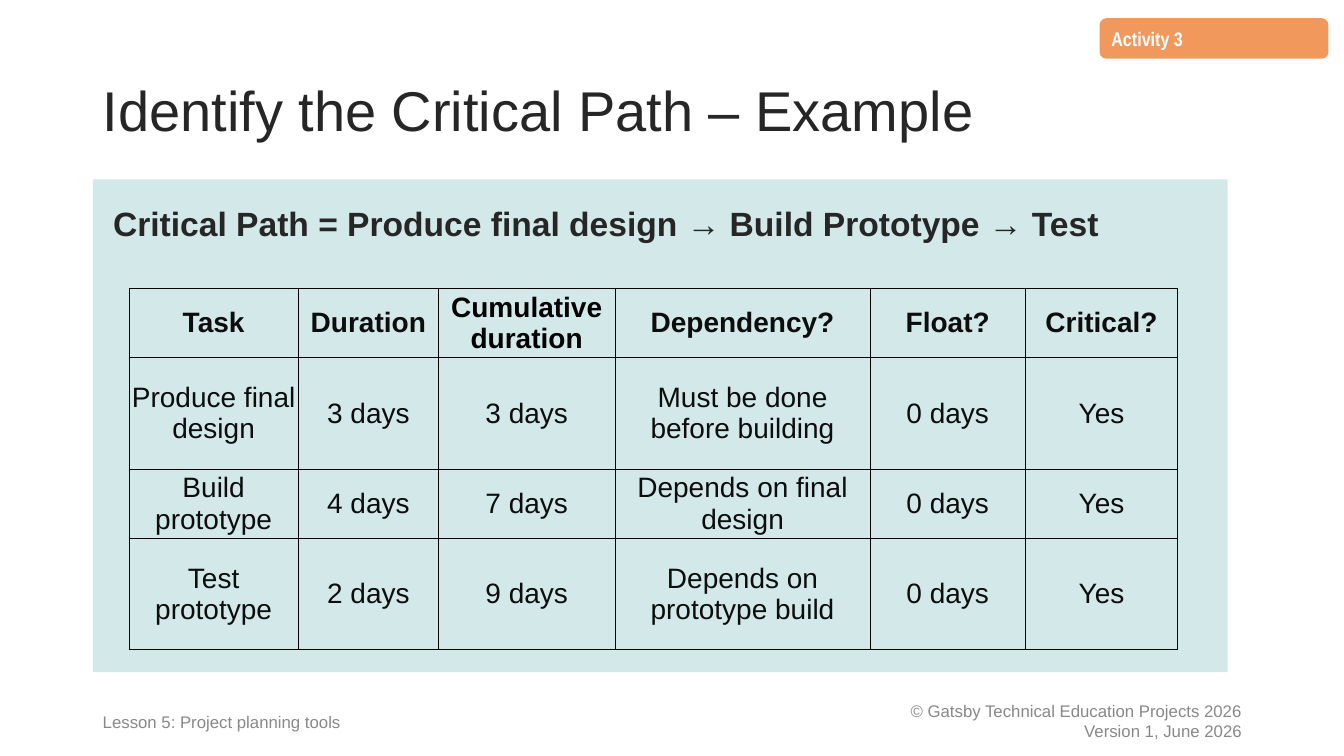
from dataclasses import astuple, dataclass

from lxml import etree
from pptx import Presentation
from pptx.dml.color import RGBColor
from pptx.enum.shapes import MSO_SHAPE
from pptx.enum.text import MSO_ANCHOR, PP_ALIGN
from pptx.oxml.ns import qn
from pptx.util import Cm, Pt

LEFT, CENTER, RIGHT = PP_ALIGN.LEFT, PP_ALIGN.CENTER, PP_ALIGN.RIGHT
TOP, MIDDLE = MSO_ANCHOR.TOP, MSO_ANCHOR.MIDDLE
RECTANGLE = MSO_SHAPE.RECTANGLE
ROUNDED_TAG = MSO_SHAPE.FLOWCHART_ALTERNATE_PROCESS


@dataclass(frozen=True)
class Theme:
    font: str = "Arial"
    tag_font: str = "Arial Narrow"
    ink: str = "262626"
    table_ink: str = "0D0D0D"
    black: str = "000000"
    white: str = "FFFFFF"
    footer: str = "898989"
    copyright: str = "888888"
    panel: str = "D2E8E9"
    tag: str = "F1995D"
    title_size: int = 40
    lead_size: int = 24
    table_size: int = 20
    tag_size: int = 14
    footer_size: int = 12
    border: float = 0.5


THEME = Theme()


@dataclass(frozen=True)
class TextStyle:
    size: int
    color: str
    bold: bool = False
    font: str = THEME.font
    align: PP_ALIGN = LEFT
    spacing: float = 1.0


@dataclass(frozen=True)
class Block:
    """A text area; lengths are in centimetres."""
    left: float
    top: float
    width: float
    height: float
    lines: tuple[str, ...]
    style: TextStyle
    anchor: MSO_ANCHOR = MIDDLE
    inset_x: float = 0.25
    inset_y: float = 0.13
    outline: MSO_SHAPE | None = None
    fill: str | None = None


@dataclass(frozen=True)
class Task:
    name: str
    duration: str
    cumulative: str
    dependency: str
    slack: str = "0 days"
    critical: str = "Yes"


BLOCKS = (
    Block(2.34, 4.52, 28.6, 12.42,
          ("Critical Path = Produce final design → Build Prototype → Test",),
          TextStyle(THEME.lead_size, THEME.ink, bold=True, spacing=1.07),
          TOP, 0.51, 0.51, RECTANGLE, THEME.panel),
    Block(2.34, 1.02, 29.21, 3.68, ("Identify the Critical Path – Example",),
          TextStyle(THEME.title_size, THEME.ink, spacing=0.9)),
    Block(27.71, 0.46, 5.77, 1.02, ("Activity 3",),
          TextStyle(THEME.tag_size, THEME.white, bold=True,
                    font=THEME.tag_font, spacing=1.08),
          TOP, outline=ROUNDED_TAG, fill=THEME.tag),
    Block(2.34, 17.65, 11.68, 1.02, ("Lesson 5: Project planning tools",),
          TextStyle(THEME.footer_size, THEME.footer, spacing=1.08)),
    Block(20.12, 17.65, 11.43, 1.02,
          ("© Gatsby Technical Education Projects 2026", "Version 1, June 2026"),
          TextStyle(THEME.footer_size, THEME.copyright, align=RIGHT)),
)

CUMULATIVE = "Cumulative duration"
HEADINGS = ("Task", "Duration", CUMULATIVE, "Dependency?", "Float?", "Critical?")
TASKS = (
    Task("Produce final design", "3 days", "3 days", "Must be done before building"),
    Task("Build prototype", "4 days", "7 days", "Depends on final design"),
    Task("Test prototype", "2 days", "9 days", "Depends on prototype build"),
)
TABLE_LEFT, TABLE_TOP = 3.25, 7.26
COLUMN_WIDTHS = (4.27, 3.53, 4.45, 6.43, 3.91, 3.84)
ROW_HEIGHTS = (1.65, 2.8, 1.65, 2.8)
CELL_INSET = 0.03


def write_lines(frame, lines: tuple[str, ...], style: TextStyle) -> None:
    for index, line in enumerate(lines):
        para = frame.add_paragraph() if index else frame.paragraphs[0]
        para.text = line
        para.alignment = style.align
        para.line_spacing = style.spacing
        para.font.name = style.font
        para.font.size = Pt(style.size)
        para.font.bold = style.bold
        para.font.color.rgb = RGBColor.from_string(style.color)


def add_block(page, block: Block) -> None:
    place = [Cm(n) for n in (block.left, block.top, block.width, block.height)]
    if block.outline is None:
        box = page.shapes.add_textbox(*place)
    else:
        box = page.shapes.add_shape(block.outline, *place)
        box.shadow.inherit = False
        box.fill.solid()
        box.fill.fore_color.rgb = RGBColor.from_string(block.fill)
        box.line.fill.background()
    frame = box.text_frame
    frame.word_wrap = True
    frame.vertical_anchor = block.anchor
    frame.margin_left = frame.margin_right = Cm(block.inset_x)
    frame.margin_top = frame.margin_bottom = Cm(block.inset_y)
    write_lines(frame, block.lines, block.style)


def add_borders(cell) -> None:
    properties = cell._tc.get_or_add_tcPr()
    for side in ("a:lnL", "a:lnR", "a:lnT", "a:lnB"):
        line = etree.SubElement(properties, qn(side), w=str(Pt(THEME.border)))
        fill = etree.SubElement(line, qn("a:solidFill"))
        etree.SubElement(fill, qn("a:srgbClr"), val=THEME.black)


def fill_cell(cell, text: str, is_heading: bool) -> None:
    add_borders(cell)
    cell.fill.background()
    cell.vertical_anchor = MIDDLE
    cell.margin_left = cell.margin_right = Cm(CELL_INSET)
    cell.margin_top = cell.margin_bottom = Cm(CELL_INSET)
    color = THEME.black if text == CUMULATIVE else THEME.table_ink
    style = TextStyle(THEME.table_size, color, bold=is_heading, align=CENTER)
    write_lines(cell.text_frame, (text,), style)


def add_task_table(page) -> None:
    rows = (HEADINGS, *map(astuple, TASKS))
    table = page.shapes.add_table(
        len(rows), len(HEADINGS), Cm(TABLE_LEFT), Cm(TABLE_TOP),
        Cm(sum(COLUMN_WIDTHS)), Cm(sum(ROW_HEIGHTS))).table
    table.horz_banding = False
    for column, width in zip(table.columns, COLUMN_WIDTHS):
        column.width = Cm(width)
    for row, height in zip(table.rows, ROW_HEIGHTS):
        row.height = Cm(height)
    for row_index, texts in enumerate(rows):
        for column_index, text in enumerate(texts):
            fill_cell(table.cell(row_index, column_index), text, row_index == 0)


def main() -> None:
    deck = Presentation()
    deck.slide_width, deck.slide_height = Cm(33.87), Cm(19.05)
    page = deck.slides.add_slide(deck.slide_layouts[6])
    for block in BLOCKS:
        add_block(page, block)
    add_task_table(page)
    deck.save("out.pptx")


if __name__ == "__main__":
    main()
